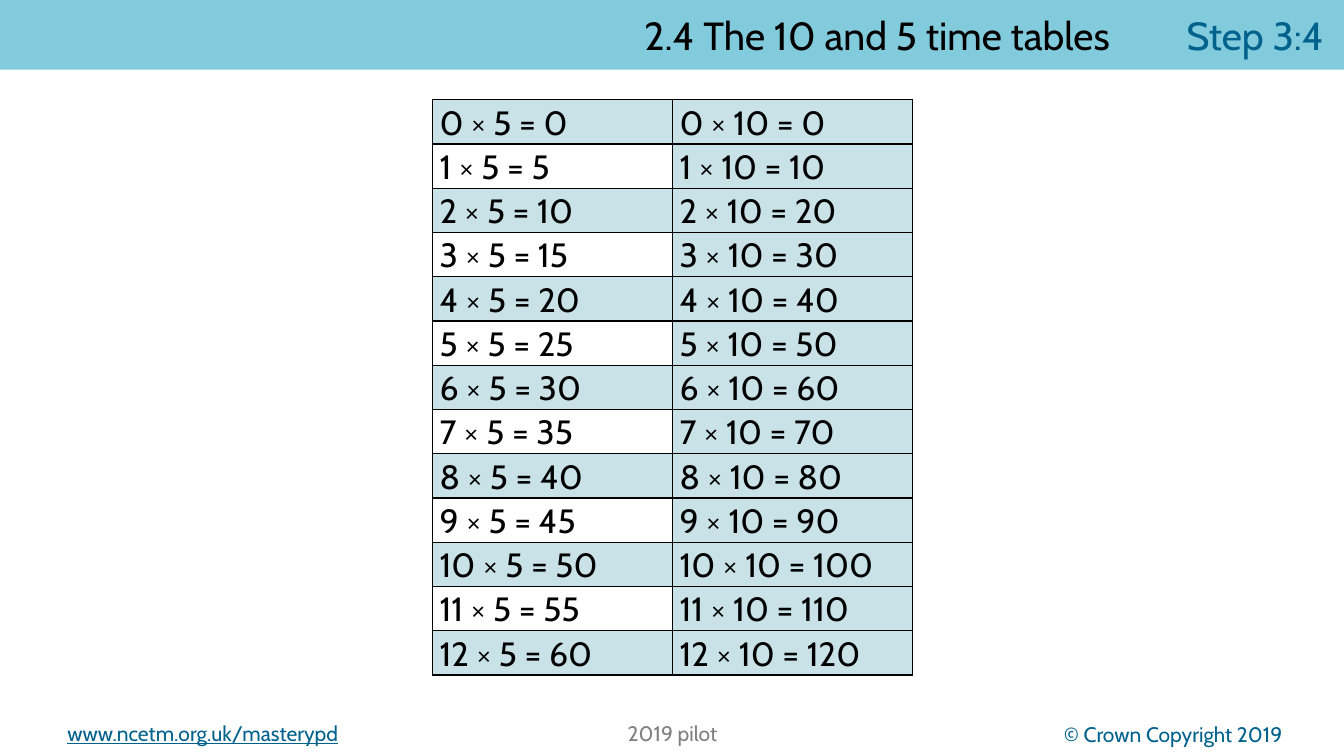
from pptx import Presentation
from pptx import util as u
from pptx.dml import color
from pptx.enum import shapes, text
from pptx.oxml import parse_xml
from pptx.oxml import ns

BLUE = "00628C"
BLACK = "000000"
ALIGN = text.PP_ALIGN


def rgb(hue):
    return color.RGBColor.from_string(hue)


def apply(item, fmt):
    for key, val in fmt.items():
        setattr(item, key, val)


class Deck:
    font = "Cabin"

    def __init__(self, wide, high):
        self.deck = Presentation()
        apply(self.deck, {"slide_width": u.Inches(wide), "slide_height": u.Inches(high)})
        self.slide = self.deck.slides.add_slide(self.deck.slide_layouts[6])

    def run(self, para, words, size, hue, line=False):
        run = para.add_run()
        run.text = words
        apply(run.font, {"name": self.font, "size": u.Pt(size), "underline": line})
        run.font.color.rgb = rgb(hue)

    def label(self, box, words, align, hue, line=False, inset=0.1):
        frame = self.slide.shapes.add_textbox(*map(u.Inches, box)).text_frame
        apply(frame, {"word_wrap": True, "margin_right": u.Inches(inset)})
        para = frame.paragraphs[0]
        para.alignment = align
        self.run(para, words, 15, hue, line)

    def banner(self, box, fill, title, step, tab):
        bar = self.slide.shapes.add_shape(shapes.MSO_SHAPE.RECTANGLE, *map(u.Inches, box))
        bar.shadow.inherit = False
        bar.fill.solid()
        bar.fill.fore_color.rgb = rgb(fill)
        bar.line.fill.background()
        apply(bar.text_frame, {
            "word_wrap": True, "vertical_anchor": text.MSO_ANCHOR.MIDDLE,
            "margin_left": u.Inches(0.2), "margin_right": u.Inches(0.2),
            "margin_top": u.Inches(0.05), "margin_bottom": u.Inches(0.05)})
        para = bar.text_frame.paragraphs[0]
        para.alignment = ALIGN.RIGHT
        para._p.get_or_add_pPr().append(parse_xml(
            f'<a:tabLst {ns.nsdecls("a")}><a:tab pos="{u.Inches(tab)}" algn="l"/></a:tabLst>'))
        self.run(para, title + "\t", 28, BLACK)
        self.run(para, step, 28, BLUE)

    def cell(self, cell, words, fill):
        apply(cell, {"margin_left": u.Inches(0.07), "margin_right": u.Inches(0.07),
                     "margin_top": 0, "margin_bottom": 0})
        para = cell.text_frame.paragraphs[0]
        para.line_spacing = 1.07
        self.run(para, words, 24, BLACK)
        props = cell._tc.get_or_add_tcPr()
        for side in ("lnL", "lnR", "lnT", "lnB"):
            props.append(parse_xml(
                f'<a:{side} {ns.nsdecls("a")} w="{u.Pt(1)}"><a:solidFill>'
                f'<a:srgbClr val="{BLACK}"/></a:solidFill></a:{side}>'))
        if fill:
            cell.fill.solid()
            cell.fill.fore_color.rgb = rgb(fill)
        else:
            cell.fill.background()

    def table(self, box, rows, fill):
        grid = self.slide.shapes.add_table(
            len(rows), len(rows[0]), *map(u.Inches, box)).table
        apply(grid, {"first_row": False, "horz_banding": False})
        for r, row in enumerate(rows):
            grid.rows[r].height = u.Inches(box[3] / len(rows))
            for c, words in enumerate(row):
                plain = c == 0 and r % 2 == 1
                self.cell(grid.cell(r, c), words, None if plain else fill)


def main():
    page = Deck(13.33, 7.5)
    page.label((8.77, 7.11, 4.1, 0.35), "© Crown Copyright 2019", ALIGN.RIGHT, BLUE, inset=0.15)
    page.label((0.57, 7.1, 4.1, 0.35), "www.ncetm.org.uk/masterypd", ALIGN.LEFT, BLUE, True)
    page.label((4.62, 7.1, 4.1, 0.35), "2019 pilot", ALIGN.CENTER, "808080")
    page.banner((0, 0, 13.33, 0.69), "82CBDD", "2.4 The 10 and 5 time tables", "Step 3:4", 5.38)
    facts = [[f"{n} × {base} = {n * base}" for base in (5, 10)] for n in range(13)]
    page.table((4.29, 0.99, 4.76, 5.71), facts, "C8E2E8")
    page.deck.save("out.pptx")


if __name__ == "__main__":
    main()
